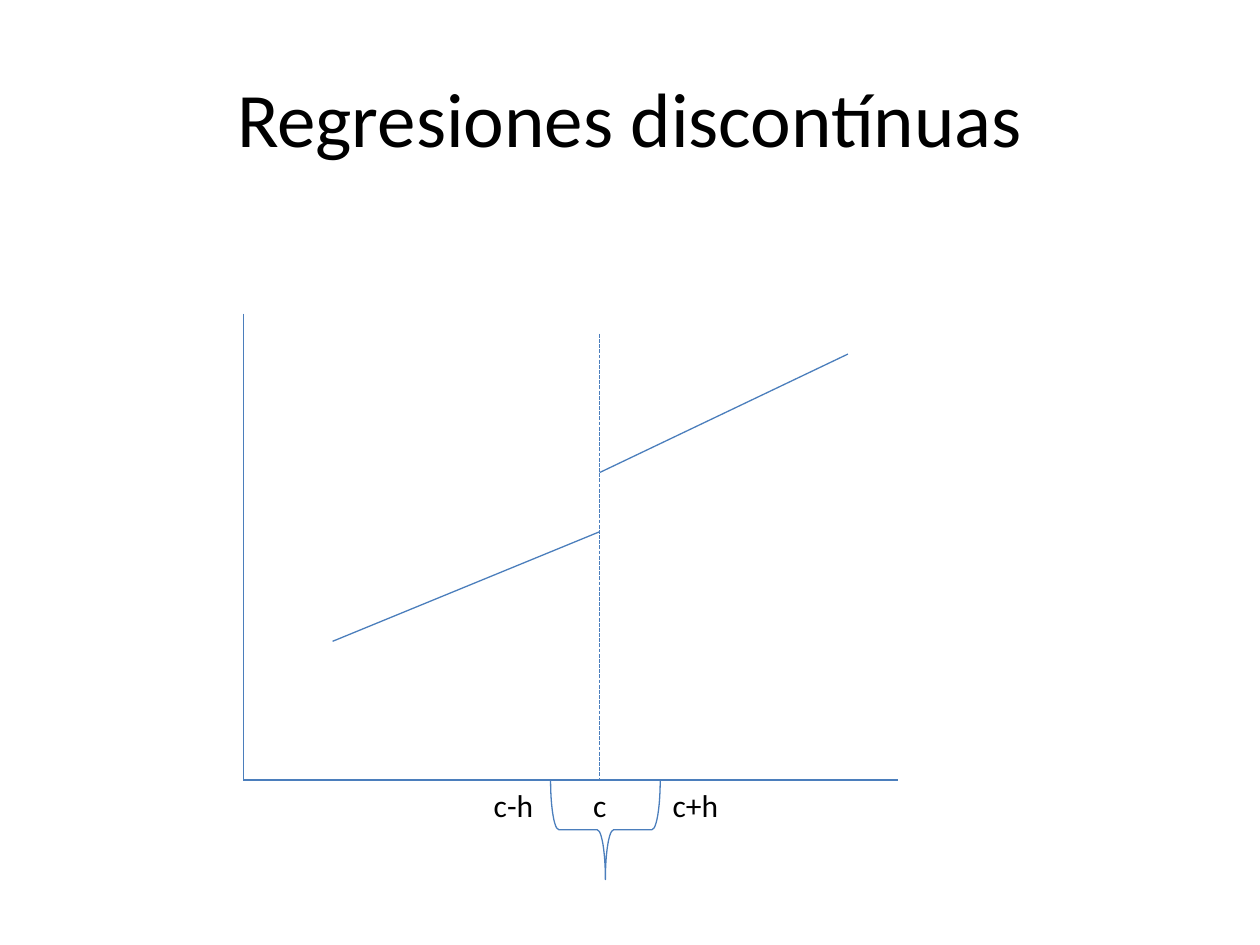
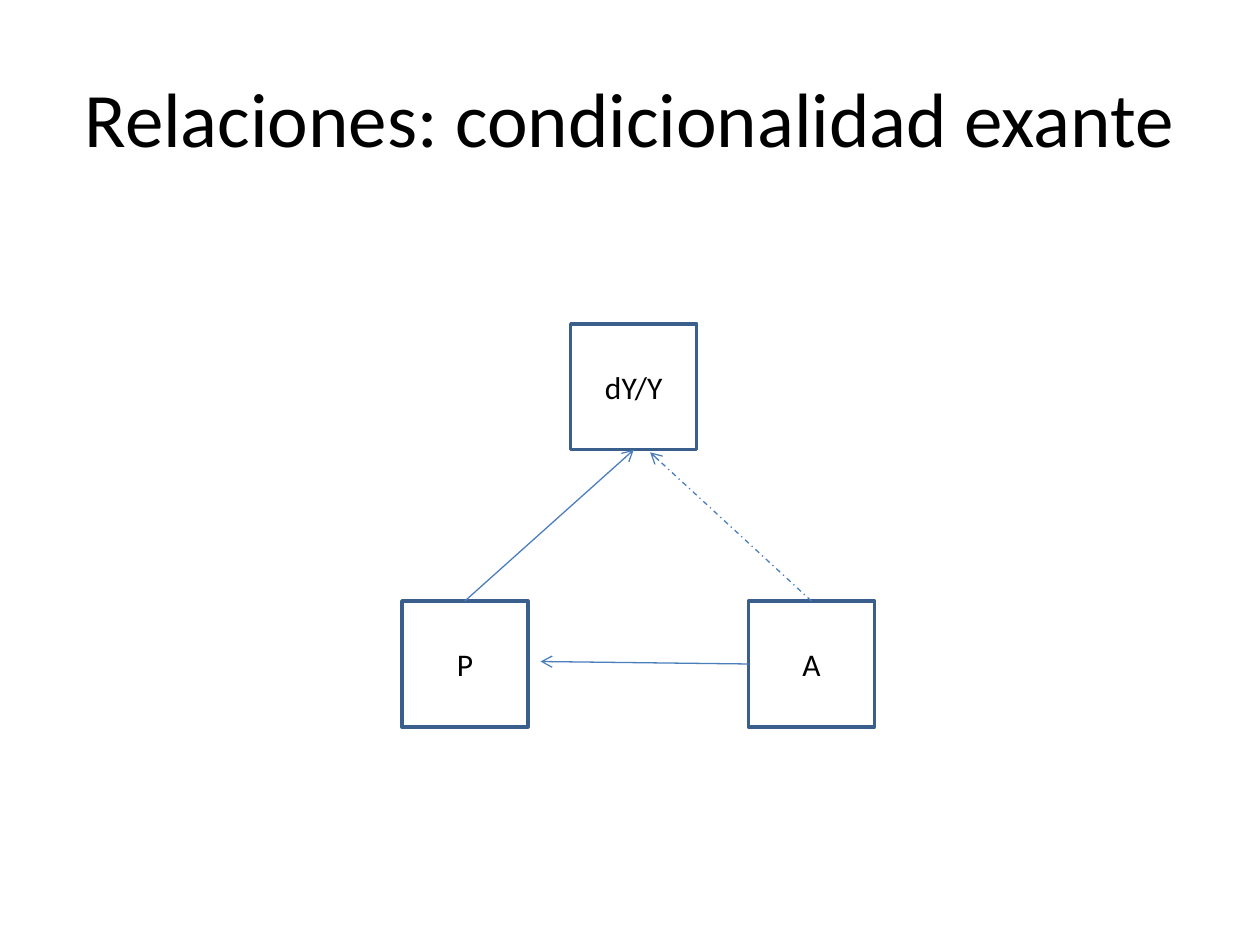
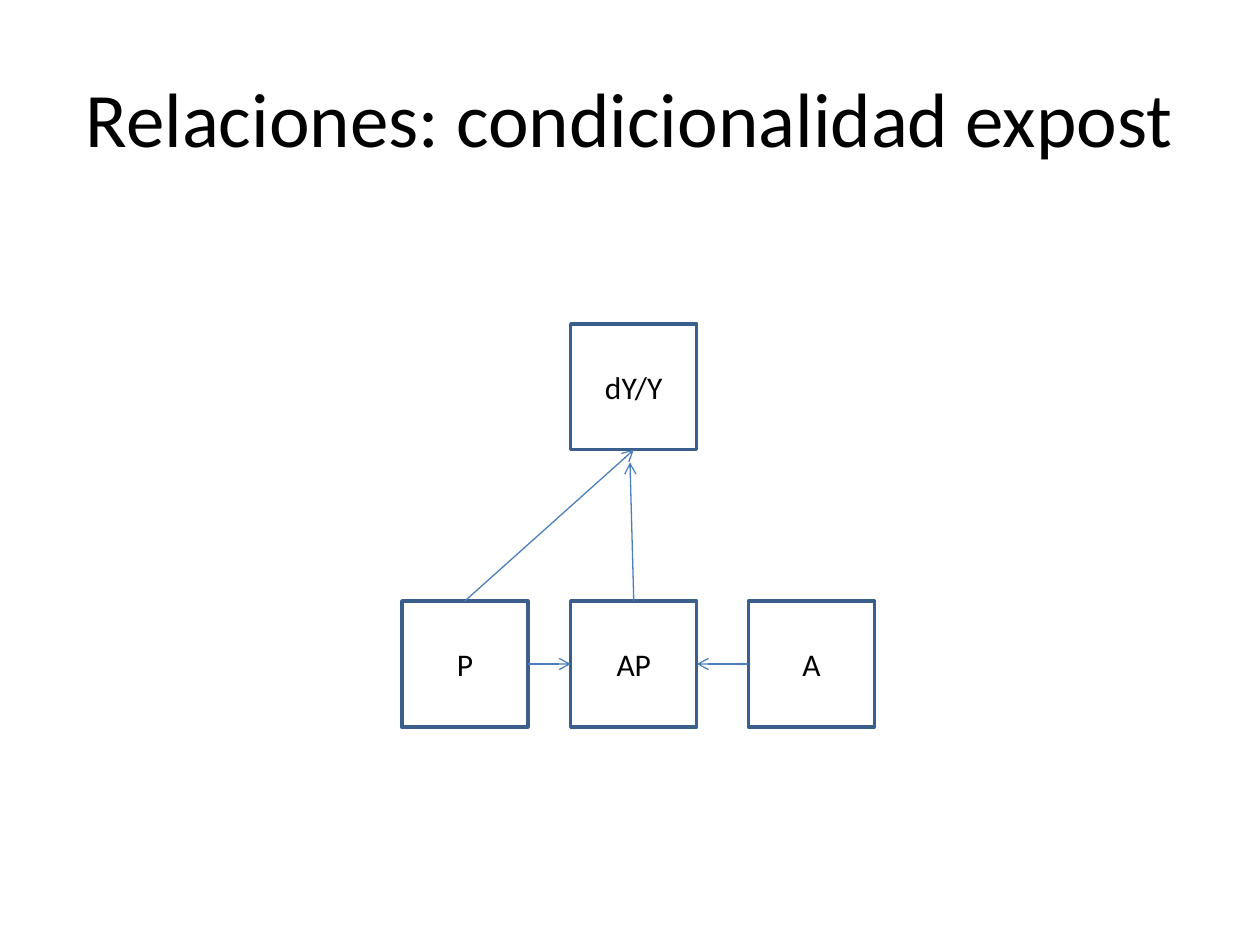
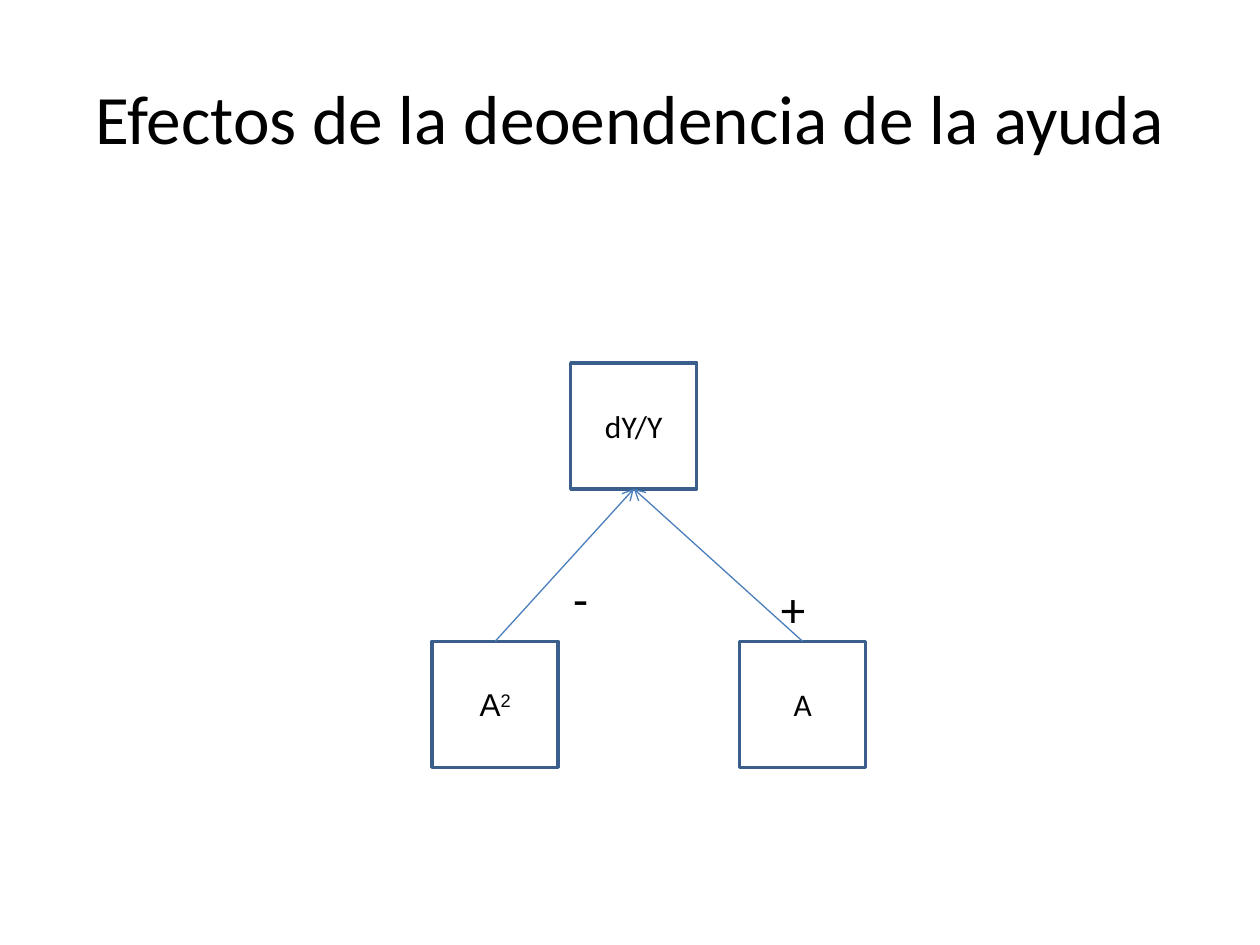
import dataclasses

import lxml.etree
import pptx
import pptx.dml.color
import pptx.enum.dml
import pptx.enum.shapes
import pptx.enum.text
import pptx.oxml.ns
import pptx.util

Inches = pptx.util.Inches
Dash = pptx.enum.dml.MSO_LINE
Shape = pptx.enum.shapes.MSO_SHAPE
Align = pptx.enum.text.PP_ALIGN
Anchor = pptx.enum.text.MSO_ANCHOR
qn = pptx.oxml.ns.qn


@dataclasses.dataclass(frozen=True)
class Theme:
    text: str = "000000"
    line: str = "4B7EBC"
    border: str = "3A5F8C"
    font: str = "Calibri"
    symbol_font: str = "Arial"
    title: float = 44
    long_title: float = 39.6
    body: float = 18
    sign: float = 28
    line_width: float = 0.75
    border_width: float = 2


THEME = Theme()
TITLE_FRAME = (0.5, 0.3, 9, 1.25)
NODE_SIZE = 1
TOP, LEFT, BOTTOM, RIGHT = range(4)

ORIGIN_X, ORIGIN_Y, CUTOFF = 1.93, 6.19, 4.76
PLOT_LINES = [
    ((ORIGIN_X, 2.49), (ORIGIN_X, ORIGIN_Y), None),
    ((ORIGIN_X, ORIGIN_Y), (7.13, ORIGIN_Y), None),
    ((CUTOFF, 2.65), (CUTOFF, ORIGIN_Y), "sysDash"),
    ((2.64, 5.09), (CUTOFF, 4.22), None),
    ((CUTOFF, 3.75), (6.73, 2.81), None),
]
BRACE_FRAME = (4.41, 6.15, 0.79, 0.87)

EX_ANTE_NODES = {"dY/Y": (4.53, 2.57), "P": (3.19, 4.77), "A": (5.94, 4.77)}
POLICY_EFFECT = (("P", TOP), ("dY/Y", BOTTOM), None)

SLIDES = [
    {
        "title": "Regresiones discontínuas",
        "lines": PLOT_LINES,
        "brace": BRACE_FRAME,
        "labels": [
            ("c", (4.61, ORIGIN_Y, 0.31, 0.4), THEME.body),
            ("c-h", (3.82, ORIGIN_Y, 0.52, 0.4), THEME.body),
            ("c+h", (5.24, ORIGIN_Y, 0.57, 0.4), THEME.body),
        ],
    },
    {
        "title": "Relaciones: condicionalidad exante",
        "nodes": EX_ANTE_NODES,
        "arrows": [
            (("A", LEFT), (4.29, 5.25), None),
            POLICY_EFFECT,
            (("A", TOP), (5.16, 3.59), "dashDot"),
        ],
    },
    {
        "title": "Relaciones: condicionalidad expost",
        "nodes": {**EX_ANTE_NODES, "AP": (4.53, 4.77)},
        "arrows": [
            POLICY_EFFECT,
            (("AP", TOP), (5, 3.67), None),
            (("A", LEFT), ("AP", RIGHT), None),
            (("P", RIGHT), ("AP", LEFT), None),
        ],
    },
    {
        "title": "Efectos de la deoendencia de la ayuda",
        "title_size": THEME.long_title,
        "nodes": {"A": (5.87, 5.09), "Α^2": (3.43, 5.09), "dY/Y": (4.53, 2.88)},
        "arrows": [
            (("A", TOP), ("dY/Y", BOTTOM), None),
            (("Α^2", TOP), ("dY/Y", BOTTOM), None),
        ],
        "labels": [
            ("+", (6.1, 4.54, 0.4, 0.57), THEME.sign),
            ("-", (4.45, 4.46, 0.32, 0.57), THEME.sign),
        ],
    },
]
DASHES = {"sysDash": Dash.SQUARE_DOT, "dashDot": Dash.DASH_DOT}


def color(value):
    return pptx.dml.color.RGBColor.from_string(value)


def inches(values):
    return [Inches(value) for value in values]


def write(box, text, *, size=THEME.body, font=THEME.font, align=Align.CENTER,
          anchor=Anchor.MIDDLE, wrap=True, grow=False):
    frame = box.text_frame
    frame.word_wrap = wrap
    frame.vertical_anchor = anchor
    if grow:
        frame.auto_size = pptx.enum.text.MSO_AUTO_SIZE.SHAPE_TO_FIT_TEXT
    para = frame.paragraphs[0]
    para.alignment = align
    for index, part in enumerate(text.split("^")):
        span = para.add_run()
        span.text = part
        span.font.size = pptx.util.Pt(size)
        span.font.name = font
        span.font.color.rgb = color(THEME.text)
        if index:
            span.font._element.set("baseline", "30000")


def style_line(line, value, width, dash=None):
    line.color.rgb = color(value)
    line.width = pptx.util.Pt(width)
    if dash:
        line.dash_style = DASHES[dash]


def add_outline(page, kind, frame, value, width):
    shape = page.shapes.add_shape(kind, *inches(frame))
    shape.shadow.inherit = False
    shape.fill.background()
    style_line(shape.line, value, width)
    return shape


def add_line(page, start, end, dash=None, arrow=False):
    line = page.shapes.add_connector(
        pptx.enum.shapes.MSO_CONNECTOR.STRAIGHT, *inches(start + end))
    style_line(line.line, THEME.line, THEME.line_width, dash)
    properties = line._element.spPr
    if arrow:
        lxml.etree.SubElement(properties.find(qn("a:ln")), qn("a:tailEnd"), type="arrow")
    lxml.etree.SubElement(properties, qn("a:effectLst"))
    return line


def add_node(page, text, corner):
    node = add_outline(page, Shape.RECTANGLE, (*corner, NODE_SIZE, NODE_SIZE),
                       THEME.border, THEME.border_width)
    write(node, text, font=THEME.symbol_font if "^" in text else THEME.font)
    return node


def add_arrow(page, nodes, start, end, dash):
    arrow = add_line(page, (0, 0), (0, 0), dash, arrow=True)
    arrow.begin_connect(nodes[start[0]], start[1])
    if end[0] in nodes:
        arrow.end_connect(nodes[end[0]], end[1])
    else:
        arrow.end_x, arrow.end_y = inches(end)


def add_page(deck, content):
    page = deck.slides.add_slide(deck.slide_layouts[6])
    title = page.shapes.add_textbox(*inches(TITLE_FRAME))
    write(title, content["title"], size=content.get("title_size", THEME.title))
    for start, end, dash in content.get("lines", []):
        add_line(page, start, end, dash)
    if "brace" in content:
        brace = add_outline(page, Shape.LEFT_BRACE, content["brace"],
                            THEME.line, THEME.line_width)
        brace.rotation = 270
    nodes = {text: add_node(page, text, corner)
             for text, corner in content.get("nodes", {}).items()}
    for start, end, dash in content.get("arrows", []):
        add_arrow(page, nodes, start, end, dash)
    for text, frame, size in content.get("labels", []):
        label = page.shapes.add_textbox(*inches(frame))
        write(label, text, size=size, align=Align.LEFT, anchor=Anchor.TOP,
              wrap=False, grow=True)


def main():
    deck = pptx.Presentation()
    deck.slide_width, deck.slide_height = inches((10, 7.5))
    for content in SLIDES:
        add_page(deck, content)
    deck.save("out.pptx")


if __name__ == "__main__":
    main()
